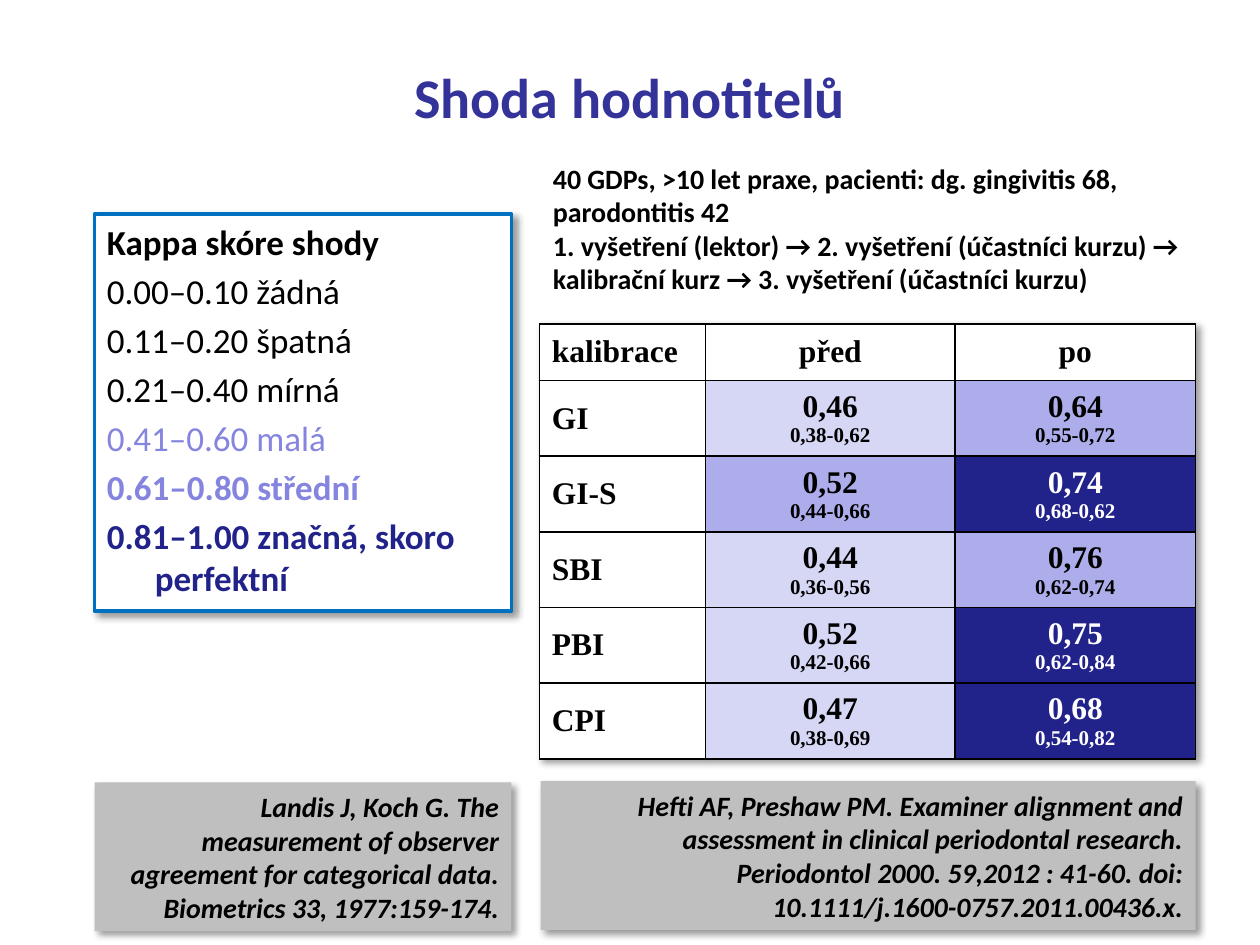
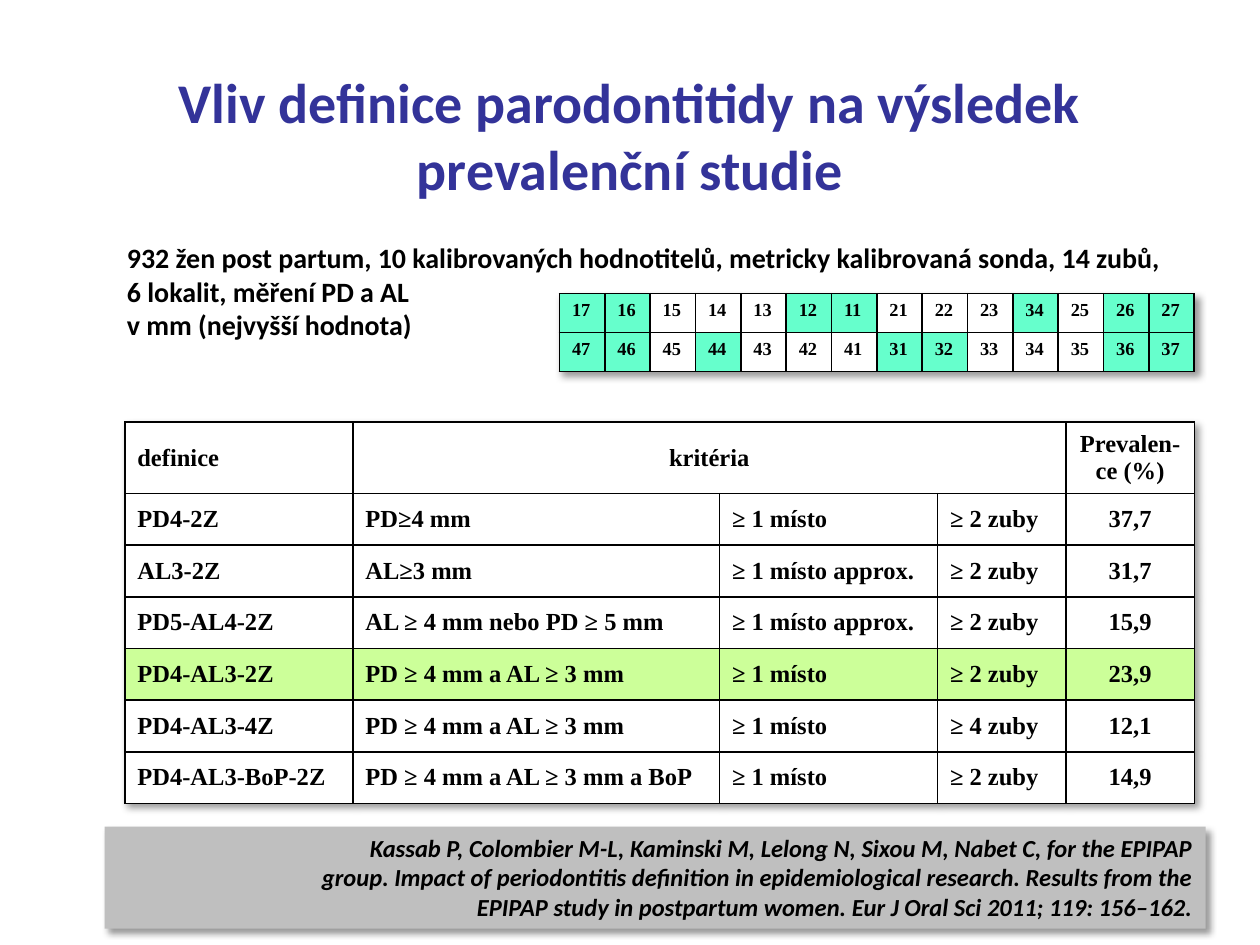
from lxml import etree
from pptx import Presentation
from pptx.dml.color import RGBColor
from pptx.enum.shapes import MSO_SHAPE
from pptx.enum.text import MSO_ANCHOR, PP_ALIGN
from pptx.oxml import parse_xml
from pptx.oxml.ns import nsdecls
from pptx.util import Inches, Pt

# Shared style
COLORS = {
    "title": "333399", "black": "000000", "white": "FFFFFF", "frame": "0070C0",
    "citation": "BFBFBF", "pale": "D6D6F5", "medium": "ADADEB", "dark": "22228B",
    "lilac": "8585E0", "tooth": "66FFCC", "highlight": "CCFF99",
}
BODY_FONT, TABLE_FONT = "Calibri", "Times New Roman"
LEFT, CENTER, RIGHT = PP_ALIGN.LEFT, PP_ALIGN.CENTER, PP_ALIGN.RIGHT
TOP, MIDDLE = MSO_ANCHOR.TOP, MSO_ANCHOR.MIDDLE

# Slide 1: agreement of examiners
AGREEMENT_TITLE = "Shoda hodnotitelů"
KAPPA_SCALE = [  # text, colour, bold
    ("Kappa skóre shody", "black", True),
    ("0.00–0.10 žádná", "black", False),
    ("0.11–0.20 špatná", "black", False),
    ("0.21–0.40 mírná", "black", False),
    ("0.41–0.60 malá", "lilac", False),
    ("0.61–0.80 střední", "lilac", True),
    ("0.81–1.00 značná, skoro perfektní", "dark", True),
]
AGREEMENT_DESIGN = [
    "40 GDPs, >10 let praxe, pacienti: dg. gingivitis 68, parodontitis 42",
    "1. vyšetření (lektor) → 2. vyšetření (účastníci kurzu) → "
    "kalibrační kurz → 3. vyšetření (účastníci kurzu)",
]
KAPPA_HEADER = ["kalibrace", "před", "po"]
KAPPA_RESULTS = [  # index, then (kappa, interval, fill) before and after
    ("GI", ("0,46", "0,38-0,62", "pale"), ("0,64", "0,55-0,72", "medium")),
    ("GI-S", ("0,52", "0,44-0,66", "medium"), ("0,74", "0,68-0,62", "dark")),
    ("SBI", ("0,44", "0,36-0,56", "pale"), ("0,76", "0,62-0,74", "medium")),
    ("PBI", ("0,52", "0,42-0,66", "pale"), ("0,75", "0,62-0,84", "dark")),
    ("CPI", ("0,47", "0,38-0,69", "pale"), ("0,68", "0,54-0,82", "dark")),
]
LANDIS = ["Landis J, Koch G. The measurement of observer agreement for "
          "categorical data. Biometrics 33, 1977:159-174."]
HEFTI = [
    "Hefti AF, Preshaw PM. Examiner alignment and assessment in clinical "
    "periodontal research.",
    "Periodontol 2000. 59,2012 : 41-60. doi: 10.1111/j.1600-0757.2011.00436.x.",
]

# Slide 2: effect of the case definition
DEFINITION_TITLE = "Vliv definice parodontitidy na výsledek prevalenční studie"
DEFINITION_DESIGN = [
    "932 žen post partum, 10 kalibrovaných hodnotitelů, metricky kalibrovaná "
    "sonda, 14 zubů, 6 lokalit, měření PD a AL",
    "v mm (nejvyšší hodnota)",
]
DEFINITIONS = [
    ("definice", "kritéria", "", "", "Prevalen-ce (%)"),
    ("PD4-2Z", "PD≥4 mm", "≥ 1 místo", "≥ 2 zuby", "37,7"),
    ("AL3-2Z", "AL≥3 mm", "≥ 1 místo approx.", "≥ 2 zuby", "31,7"),
    ("PD5-AL4-2Z", "AL ≥ 4 mm nebo PD ≥ 5 mm", "≥ 1 místo approx.", "≥ 2 zuby", "15,9"),
    ("PD4-AL3-2Z", "PD ≥ 4 mm a AL ≥ 3 mm", "≥ 1 místo", "≥ 2 zuby", "23,9"),
    ("PD4-AL3-4Z", "PD ≥ 4 mm a AL ≥ 3 mm", "≥ 1 místo", "≥ 4 zuby", "12,1"),
    ("PD4-AL3-BoP-2Z", "PD ≥ 4 mm a AL ≥ 3 mm a BoP", "≥ 1 místo", "≥ 2 zuby", "14,9"),
]
HIGHLIGHTED = "PD4-AL3-2Z"
TEETH = [  # teeth of one jaw, examined teeth
    ("17 16 15 14 13 12 11 21 22 23 34 25 26 27", "17 16 12 11 34 26 27"),
    ("47 46 45 44 43 42 41 31 32 33 34 35 36 37", "47 46 44 31 32 36 37"),
]
KASSAB = [
    "Kassab P, Colombier M-L, Kaminski M, Lelong N, Sixou M, Nabet C, for the EPIPAP",
    "group. Impact of periodontitis definition in epidemiological research. "
    "Results from the",
    "EPIPAP study in postpartum women. Eur J Oral Sci 2011; 119: 156–162.",
]


def rgb(name):
    return RGBColor.from_string(COLORS[name])


def inches(values):
    return [Inches(v) for v in values]


def write(tf, text, *, size=16, color="black", bold=True, italic=False,
          font=BODY_FONT, align=LEFT, hanging=0, before=0):
    """Add one paragraph; the first call fills the empty one."""
    first = not tf.paragraphs[0].runs
    p = tf.paragraphs[0] if first else tf.add_paragraph()
    p.alignment = align
    if before and not first:
        p.space_before = Pt(before)
    if hanging:
        pPr = p._p.get_or_add_pPr()
        pPr.set("marL", str(Inches(hanging)))
        pPr.set("indent", str(-Inches(hanging)))
    r = p.add_run()
    r.text = text
    r.font.size, r.font.bold, r.font.italic = Pt(size), bold, italic
    r.font.name = font
    r.font.color.rgb = rgb(color)


def effects():
    return parse_xml(
        f'<a:effectLst {nsdecls("a")}><a:outerShdw blurRad="{Pt(4)}" dist="{Pt(3)}" '
        'dir="2700000" algn="tl" rotWithShape="0"><a:srgbClr val="000000">'
        '<a:alpha val="40000"/></a:srgbClr></a:outerShdw></a:effectLst>')


def add_text(s, at, lines, *, anchor=TOP, **fmt):
    tf = s.shapes.add_textbox(*inches(at)).text_frame
    tf.word_wrap = True
    tf.vertical_anchor = anchor
    for line in lines:
        write(tf, line, **fmt)


def add_panel(s, at, fill, *, line=None, anchor=TOP):
    sp = s.shapes.add_shape(MSO_SHAPE.RECTANGLE, *inches(at))
    sp.fill.solid()
    sp.fill.fore_color.rgb = rgb(fill)
    if line:
        sp.line.color.rgb = rgb(line)
        sp.line.width = Pt(2.25)
    else:
        sp.line.fill.background()
    sp.shadow.inherit = False
    empty = sp._element.spPr.find("{*}effectLst")
    empty.getparent().replace(empty, effects())
    tf = sp.text_frame
    tf.word_wrap = True
    tf.vertical_anchor = anchor
    return tf


def add_citation(s, at, lines, *, size=16, anchor=MIDDLE):
    tf = add_panel(s, at, "citation", anchor=anchor)
    for line in lines:
        write(tf, line, size=size, italic=True, align=RIGHT)


def add_grid(s, left, top, widths, heights):
    """Add a plain table with a shadow and return it."""
    shape = s.shapes.add_table(len(heights), len(widths), *inches(
        (left, top, sum(widths), sum(heights))))
    table = shape.table
    table.first_row = table.horz_banding = False
    table._tbl.tblPr.insert(0, effects())
    for column, width in zip(table.columns, widths):
        column.width = Inches(width)
    for row, height in zip(table.rows, heights):
        row.height = Inches(height)
    return table


def fill_cell(cell, lines, *, fill="white", anchor=MIDDLE, **fmt):
    """Write (text, size) lines into a bordered, filled cell."""
    tcPr = cell._tc.get_or_add_tcPr()
    for side in "LRTB":
        tcPr.append(parse_xml(
            f'<a:ln{side} {nsdecls("a")} w="{Pt(1)}"><a:solidFill>'
            f'<a:srgbClr val="{COLORS["black"]}"/></a:solidFill></a:ln{side}>'))
    cell.fill.solid()
    cell.fill.fore_color.rgb = rgb(fill)
    cell.vertical_anchor = anchor
    for text, size in lines:
        write(cell.text_frame, text, size=size, font=TABLE_FONT, **fmt)


def add_slide(prs, title, top):
    s = prs.slides.add_slide(prs.slide_layouts[6])
    add_text(s, (0.75, top, 8.5, 1.25), [title], anchor=MIDDLE,
             size=32, color="title", align=CENTER)
    return s


def build_agreement(prs):
    s = add_slide(prs, AGREEMENT_TITLE, 0.14)

    # Kappa scale
    tf = add_panel(s, (0.75, 1.7, 3.31, 3.15), "white", line="frame")
    for text, color, bold in KAPPA_SCALE:
        write(tf, text, size=20, color=color, bold=bold, hanging=0.38, before=4)
    add_citation(s, (0.75, 6.21, 3.31, 1.18), LANDIS)

    # Kappa before and after calibration
    table = add_grid(s, 4.28, 2.57, [1.32, 1.98, 1.91],
                     [0.45] + [0.6] * len(KAPPA_RESULTS))
    for c, text in enumerate(KAPPA_HEADER):
        fill_cell(table.cell(0, c), [(text, 18)], align=CENTER if c else LEFT)
    for r, (index, *scores) in enumerate(KAPPA_RESULTS, 1):
        fill_cell(table.cell(r, 0), [(index, 18)])
        for c, (kappa, interval, fill) in enumerate(scores, 1):
            fill_cell(table.cell(r, c), [(kappa, 18), (interval, 12)], fill=fill,
                      color="white" if fill == "dark" else "black", align=CENTER)

    add_citation(s, (4.29, 6.2, 5.2, 1.18), HEFTI)
    add_text(s, (4.29, 1.23, 5.2, 1.18), AGREEMENT_DESIGN)


def build_definition(prs):
    s = add_slide(prs, DEFINITION_TITLE, 0.44)

    # Definitions and prevalence
    table = add_grid(s, 0.99, 3.35, [1.81, 2.91, 1.73, 1.02, 1.02],
                     [0.53] + [0.41] * (len(DEFINITIONS) - 1))
    for r, row in enumerate(DEFINITIONS):
        for c, text in enumerate(row):
            centred = c == 4 or (r == 0 and c == 1)
            fill_cell(table.cell(r, c), [(text, 14)] if text else [],
                      fill="highlight" if row[0] == HIGHLIGHTED else "white",
                      align=CENTER if centred else LEFT)
    table.cell(0, 1).merge(table.cell(0, 3))

    add_citation(s, (0.83, 6.56, 8.74, 0.81), KASSAB, size=14, anchor=TOP)
    add_text(s, (0.91, 1.86, 8.5, 0.91), DEFINITION_DESIGN)

    # Examined teeth
    jaw = add_grid(s, 4.44, 2.33, [0.36] * 14, [0.31] * len(TEETH))
    for r, (teeth, examined) in enumerate(TEETH):
        for c, tooth in enumerate(teeth.split()):
            fill_cell(jaw.cell(r, c), [(tooth, 10.5)], anchor=TOP,
                      fill="tooth" if tooth in examined.split() else "white")


def main():
    prs = Presentation()
    prs.slide_width, prs.slide_height = Inches(10), Inches(7.5)
    build_agreement(prs)
    build_definition(prs)
    prs.save("out.pptx")


if __name__ == "__main__":
    main()
